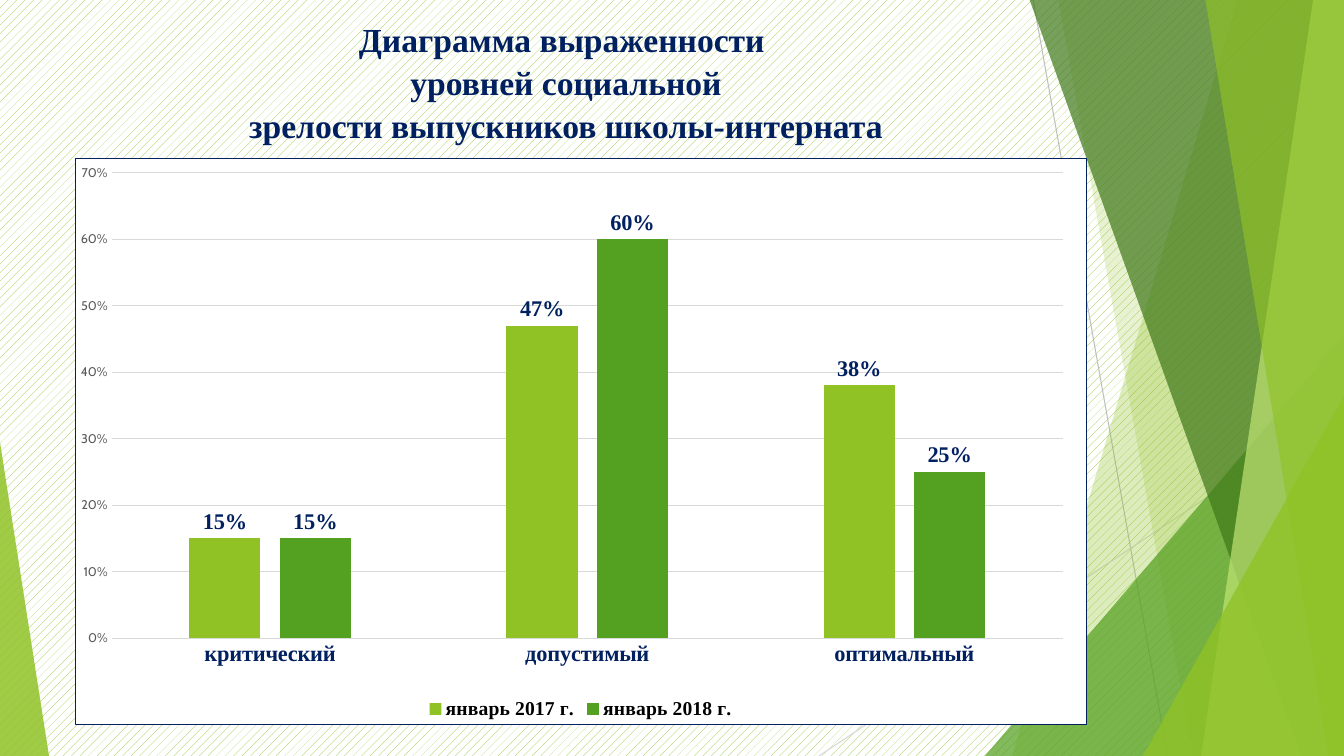
from lxml.etree import SubElement
from pptx import Presentation
from pptx.chart.data import CategoryChartData
from pptx.dml.color import RGBColor
from pptx.enum.chart import XL_CHART_TYPE as ChartType
from pptx.enum.chart import XL_LABEL_POSITION as LabelPosition
from pptx.enum.chart import XL_LEGEND_POSITION as LegendPosition
from pptx.enum.chart import XL_TICK_MARK as TickMark
from pptx.enum.dml import MSO_PATTERN as Pattern
from pptx.enum.shapes import MSO_CONNECTOR as Connector
from pptx.enum.shapes import MSO_SHAPE as Shape
from pptx.enum.text import MSO_ANCHOR as Anchor
from pptx.enum.text import PP_ALIGN as Align
from pptx.oxml import parse_xml
from pptx.oxml.ns import nsdecls, qn
from pptx.util import Pt

WIDTH, HEIGHT = 960, 540
GREEN, DARK_GREEN, NAVY = "90C226", "54A021", "002060"
GRID_GREY = "D9D9D9"
SERIF, SANS = "Times New Roman", "Cabin"

TITLE_LINES = [
    "Диаграмма выраженности ",
    "уровней социальной",
    "зрелости выпускников школы-интерната",
]
LEVELS = ["критический", "допустимый", "оптимальный"]
MONTHS = [
    ("январь 2017 г.", (0.15, 0.47, 0.38), GREEN),
    ("январь 2018 г.", (0.15, 0.6, 0.25), DARK_GREEN),
]


def rgb(code):
    """Return the colour for a hex string."""
    return RGBColor.from_string(code)


def apply(target, values):
    """Set every attribute named in values on target."""
    for name, value in values.items():
        setattr(target, name, value)


def set_font(font, size, color, name=SERIF, bold=True):
    """Format a font."""
    apply(font, {"size": Pt(size), "name": name, "bold": bold})
    font.color.rgb = rgb(color)


def set_line(line, color):
    """Give a line its colour and the common width."""
    line.color.rgb = rgb(color)
    line.width = Pt(0.75)


def tint(shape, color, opacity):
    """Fill a shape with a translucent colour and no outline."""
    shape.shadow.inherit = False
    shape.fill.solid()
    shape.fill.fore_color.rgb = rgb(color)
    shape.line.fill.background()
    swatch = shape.fill._xPr.find(".//" + qn("a:srgbClr"))
    SubElement(swatch, qn("a:alpha"), val=str(opacity * 1000))


def add_ray(slide, start, end, color):
    """Draw a thin background line."""
    ray = slide.shapes.add_connector(Connector.STRAIGHT, *map(Pt, start + end))
    set_line(ray.line, color)
    SubElement(ray._element.spPr, qn("a:effectLst"))


def add_blade(slide, top, bottom, color, opacity):
    """Draw a slanted facet reaching the right edge."""
    builder = slide.shapes.build_freeform(Pt(top), 0)
    corners = [(WIDTH, 0), (WIDTH, HEIGHT), (bottom, HEIGHT)]
    builder.add_line_segments([(Pt(x), Pt(y)) for x, y in corners])
    tint(builder.convert_to_shape(), color, opacity)


def add_corner(slide, left, top, width, apex, color, opacity):
    """Draw a triangle standing on the bottom edge."""
    corner = slide.shapes.add_shape(
        Shape.ISOSCELES_TRIANGLE, Pt(left), Pt(top), Pt(width), Pt(HEIGHT - top)
    )
    corner.adjustments[0] = apex
    tint(corner, color, opacity)


def add_facets(slide):
    """Draw the green facets at the slide edges."""
    add_ray(slide, (738, 0), (834, HEIGHT), "BFBFBF")
    add_ray(slide, (WIDTH, 290), (585, HEIGHT), GRID_GREY)
    add_blade(slide, 884, 723, GREEN, 30)
    add_blade(slide, 756, 852, GREEN, 20)
    add_corner(slide, 703.5, 240, 256.5, 1, DARK_GREEN, 72)
    add_blade(slide, 735.5, 929.5, "3F7819", 70)
    add_blade(slide, 938, 858, "C0E474", 70)
    add_blade(slide, 861, 949, GREEN, 65)
    add_corner(slide, 816.5, 283, 143.5, 1, GREEN, 80)
    add_corner(slide, 0, 316, 35, 0, GREEN, 85)


def fill_title(title):
    """Place the title and write its lines."""
    apply(title, {"left": Pt(53.3), "top": Pt(6.5), "width": Pt(702), "height": Pt(139)})
    frame = title.text_frame
    apply(frame, {"vertical_anchor": Anchor.TOP, "margin_top": Pt(5), "word_wrap": True})
    heading = frame.paragraphs[0]
    apply(heading, {"text": "\v".join(TITLE_LINES), "alignment": Align.CENTER,
                    "line_spacing": 1.07})
    for run in heading.runs:
        set_font(run.font, 24, NAVY)
    for line_break in heading._p.findall(qn("a:br")):
        props = SubElement(line_break, qn("a:rPr"), sz="2400")
        SubElement(props, qn("a:latin"), typeface=SANS)


def format_axes(chart):
    """Format the level axis and the percent axis."""
    levels, percents = chart.category_axis, chart.value_axis
    for axis in (levels, percents):
        apply(axis, {"major_tick_mark": TickMark.NONE, "minor_tick_mark": TickMark.NONE})
    set_font(levels.tick_labels.font, 16, NAVY)
    set_line(levels.format.line, GRID_GREY)
    apply(percents, {"minimum_scale": 0, "maximum_scale": 0.7, "major_unit": 0.1})
    apply(percents.tick_labels, {"number_format": "0%", "number_format_is_linked": False})
    set_font(percents.tick_labels.font, 9, "595959", SANS, False)
    set_line(percents.major_gridlines.format.line, GRID_GREY)
    percents.format.line.fill.background()


def format_series(series, color):
    """Colour the columns and label them."""
    series.format.fill.solid()
    series.format.fill.fore_color.rgb = rgb(color)
    labels = series.data_labels
    apply(labels, {"show_value": True, "number_format": "0%",
                   "number_format_is_linked": False,
                   "position": LabelPosition.OUTSIDE_END})
    set_font(labels.font, 16, NAVY)


def frame_chart(chart):
    """Give the chart a white ground, a border and a fixed plot area."""
    space = chart._chartSpace
    space.find(qn("c:chart")).addnext(parse_xml(
        f'<c:spPr {nsdecls("c", "a")}><a:solidFill><a:srgbClr val="FFFFFF"/></a:solidFill>'
        f'<a:ln w="{Pt(0.75)}"><a:solidFill><a:srgbClr val="{NAVY}"/></a:solidFill></a:ln>'
        "</c:spPr>"
    ))
    area = space.find(".//" + qn("c:plotArea"))
    for stale in area.findall(qn("c:layout")):
        area.remove(stale)
    layout = parse_xml(f'<c:layout {nsdecls("c")}><c:manualLayout/></c:layout>')
    settings = {"layoutTarget": "inner", "xMode": "edge", "yMode": "edge",
                "x": "0.036", "y": "0.025", "w": "0.941", "h": "0.823"}
    for name, value in settings.items():
        SubElement(layout[0], qn("c:" + name), val=value)
    area.insert(0, layout)


def add_maturity_chart(slide):
    """Add the clustered columns of maturity levels."""
    data = CategoryChartData(number_format="0%")
    data.categories = LEVELS
    for month, shares, _ in MONTHS:
        data.add_series(month, shares)
    chart = slide.shapes.add_chart(
        ChartType.COLUMN_CLUSTERED, Pt(53.3), Pt(113), Pt(723), Pt(404.6), data
    ).chart
    set_font(chart.font, 10, "000000", SANS, False)
    apply(chart, {"has_title": False, "has_legend": True})
    apply(chart.legend, {"position": LegendPosition.BOTTOM, "include_in_layout": False})
    set_font(chart.legend.font, 14, "000000")
    columns = chart.plots[0]
    apply(columns, {"gap_width": 219, "overlap": -27, "vary_by_categories": False})
    for series, (_, _, color) in zip(columns.series, MONTHS):
        format_series(series, color)
    format_axes(chart)
    frame_chart(chart)


def main():
    """Build and save the slide."""
    deck = Presentation()
    apply(deck, {"slide_width": Pt(WIDTH), "slide_height": Pt(HEIGHT)})
    slide = deck.slides.add_slide(deck.slide_layouts[5])
    ground = slide.background.fill
    ground.patterned()
    ground.pattern = Pattern.PERCENT_20
    ground.fore_color.rgb = rgb(GREEN)
    ground.back_color.rgb = rgb("FFFFFF")
    add_facets(slide)
    fill_title(slide.shapes.title)
    add_maturity_chart(slide)
    deck.save("out.pptx")


if __name__ == "__main__":
    main()
